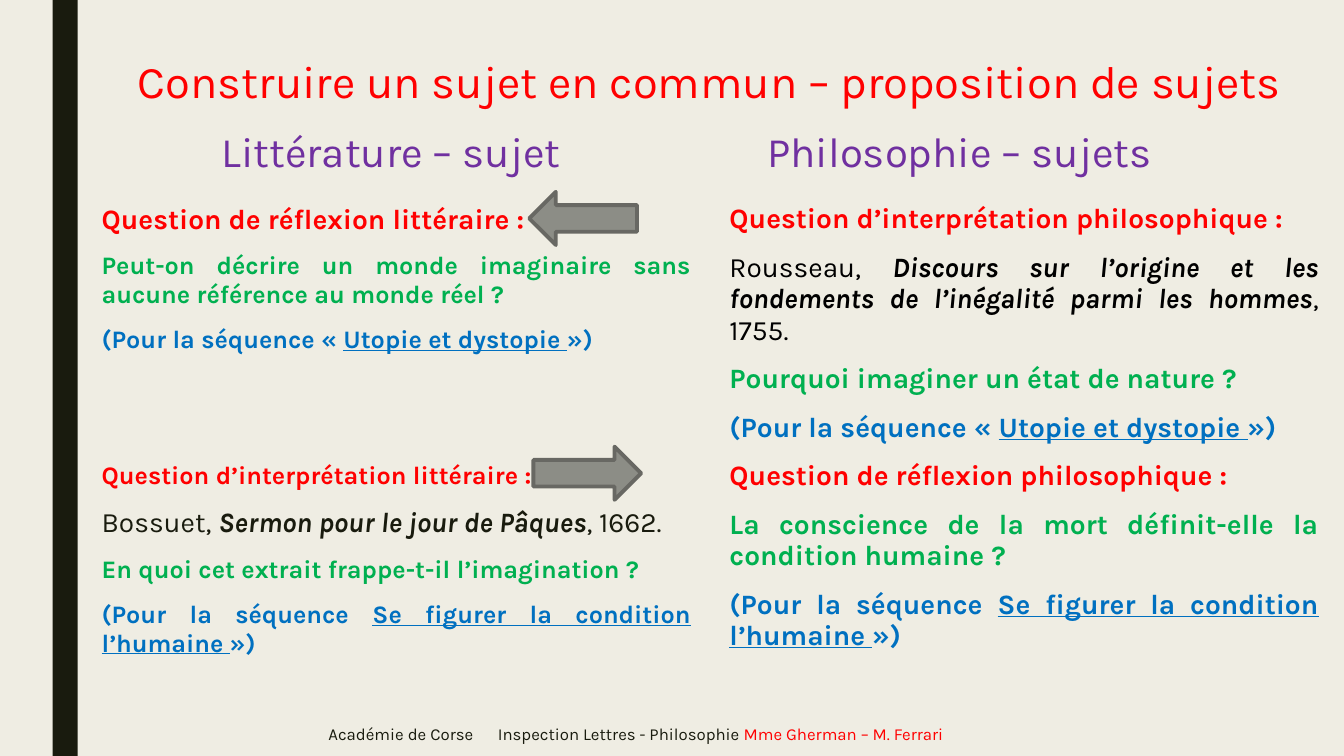
from lxml.etree import SubElement
from pptx import Presentation
from pptx.dml.color import RGBColor
from pptx.enum.shapes import MSO_SHAPE
from pptx.enum.text import MSO_ANCHOR, MSO_AUTO_SIZE, PP_ALIGN
from pptx.oxml.ns import qn
from pptx.util import Pt

CREAM = RGBColor(0xEF, 0xED, 0xE3)
INK = RGBColor(0x19, 0x1B, 0x0E)
BLACK = RGBColor(0, 0, 0)
RED = RGBColor(0xFF, 0, 0)
PURPLE = RGBColor(0x70, 0x30, 0xA0)
GREEN = RGBColor(0, 0xB0, 0x50)
BLUE = RGBColor(0, 0x70, 0xC0)
GREY = RGBColor(0x8C, 0x8D, 0x86)
DARK_GREY = RGBColor(0x68, 0x68, 0x63)

LEFT_COLUMN, RIGHT_COLUMN = 65.5, 514
COLUMN_WIDTH = 435


def add_run(paragraph, text, size=20, color=INK, bold=False, italic=False, underline=False):
    run = paragraph.add_run()
    run.text = text
    font = run.font
    font.name = SlideBuilder.FONT
    font.size = Pt(size)
    font.color.rgb = color
    font.bold, font.italic, font.underline = bold, italic, underline


class SlideBuilder:
    FONT = "Karla"

    def __init__(self, slide):
        self.slide = slide
        slide.background.fill.solid()
        slide.background.fill.fore_color.rgb = CREAM

    def fill_frame(self, shape, paragraphs, align, spacing=1.0, before=0, after=0,
                   anchor=MSO_ANCHOR.TOP):
        """Each paragraph is a list of (text, format) runs, or (runs, space before)."""
        frame = shape.text_frame
        frame.word_wrap = True
        frame.auto_size = MSO_AUTO_SIZE.NONE
        frame.vertical_anchor = anchor
        for index, content in enumerate(paragraphs):
            runs, gap = content if isinstance(content, tuple) else (content, before)
            paragraph = frame.add_paragraph() if index else frame.paragraphs[0]
            paragraph.alignment = align
            paragraph.line_spacing = spacing
            paragraph.space_before, paragraph.space_after = Pt(gap), Pt(after)
            for text, style in runs:
                add_run(paragraph, text, **style)
        return frame

    def title(self, text, left, top, width, height):
        title = self.slide.shapes.title
        title.left, title.top, title.width, title.height = map(Pt, (left, top, width, height))
        self.fill_frame(title, [[(text, dict(size=32.4, color=RED))]], PP_ALIGN.CENTER, 0.89)

    def text(self, left, top, width, height, paragraphs, align=PP_ALIGN.LEFT, **layout):
        box = self.slide.shapes.add_textbox(*map(Pt, (left, top, width, height)))
        return self.fill_frame(box, paragraphs, align, **layout)

    def heading(self, text, left):
        self.text(left, 93, 350, 36, [[(text, dict(size=30, color=PURPLE))]],
                  PP_ALIGN.CENTER, spacing=0.84, anchor=MSO_ANCHOR.BOTTOM)

    def column(self, left, height, paragraphs):
        self.text(left, 142, COLUMN_WIDTH, height, paragraphs, PP_ALIGN.JUSTIFY,
                  spacing=0.94, before=10, after=2)

    def block(self, preset, left, top, width, height, fill, line=None, rotation=0):
        shape = self.slide.shapes.add_shape(preset, *map(Pt, (left, top, width, height)))
        shape.shadow.inherit = False
        shape.rotation = rotation
        shape.fill.solid()
        shape.fill.fore_color.rgb = fill
        if line is None:
            shape.line.fill.background()
        else:
            shape.line.color.rgb = line
            shape.line.width = Pt(2.75)

    def arrow(self, left, top, rotation=0):
        self.block(MSO_SHAPE.RIGHT_ARROW, left, top, 77, 38, GREY, DARK_GREY, rotation)


def bold_line(text, color, size=20):
    return [(text, dict(size=size, color=color, bold=True))]


def work(author, title, year, color):
    plain = dict(color=color)
    return [(author, plain), (title, dict(color=color, bold=True, italic=True)), (year, plain)]


def sequence(opening, name, size=20):
    style = dict(size=size, color=BLUE, bold=True)
    return [(opening, style), (name, dict(style, underline=True)), ("»)", style)]


def main():
    prs = Presentation()
    prs.slide_width, prs.slide_height = Pt(960), Pt(540)
    page = SlideBuilder(prs.slides.add_slide(prs.slide_layouts[5]))

    utopia = ("(Pour la séquence « ", "Utopie et dystopie ")
    condition = ("(Pour la séquence ", "Se figurer la condition l’humaine ")

    page.block(MSO_SHAPE.RECTANGLE, 37.5, 0, 18, 540, INK)
    page.title("Construire un sujet en commun – proposition de sujets",
               LEFT_COLUMN, 39, 883, 54)

    page.heading("Littérature – sujet ", 108)
    page.column(LEFT_COLUMN, 358, [
        bold_line("Question de réflexion littéraire :", RED),
        bold_line("Peut-on décrire un monde imaginaire sans aucune référence au monde réel ?",
                  GREEN, 18),
        sequence(*utopia, size=18),
        (bold_line("Question d’interprétation littéraire :", RED, 18), 75),
        work("Bossuet, ", "Sermon pour le jour de Pâques", ", 1662.", INK),
        bold_line("En quoi cet extrait frappe-t-il l’imagination ?", GREEN, 18),
        sequence(*condition, size=18),
    ])

    page.heading("Philosophie – sujets ", RIGHT_COLUMN)
    page.column(RIGHT_COLUMN, 366, [
        bold_line("Question d’interprétation philosophique :", RED),
        work("Rousseau, ",
             "Discours sur l’origine et les fondements de l’inégalité parmi les hommes",
             ", 1755.", BLACK),
        bold_line("Pourquoi imaginer un état de nature ?", GREEN),
        sequence(*utopia),
        bold_line("Question de réflexion philosophique :", RED),
        bold_line("La conscience de la mort définit-elle la condition humaine ?", GREEN),
        sequence(*condition),
    ])

    page.arrow(378, 137, rotation=180)
    page.arrow(381, 319)

    credits = page.text(227.5, 508, 495, 32, [[
        ("Académie de Corse\tInspection Lettres - Philosophie ", dict(size=12)),
        ("Mme Gherman – M. Ferrari", dict(size=12, color=RED)),
    ]], anchor=MSO_ANCHOR.MIDDLE)
    properties = credits.paragraphs[0]._p.get_or_add_pPr()
    tabs = SubElement(properties, qn("a:tabLst"))
    SubElement(tabs, qn("a:tab"), pos=str(Pt(121)), algn="l")

    prs.save("out.pptx")


if __name__ == "__main__":
    main()
